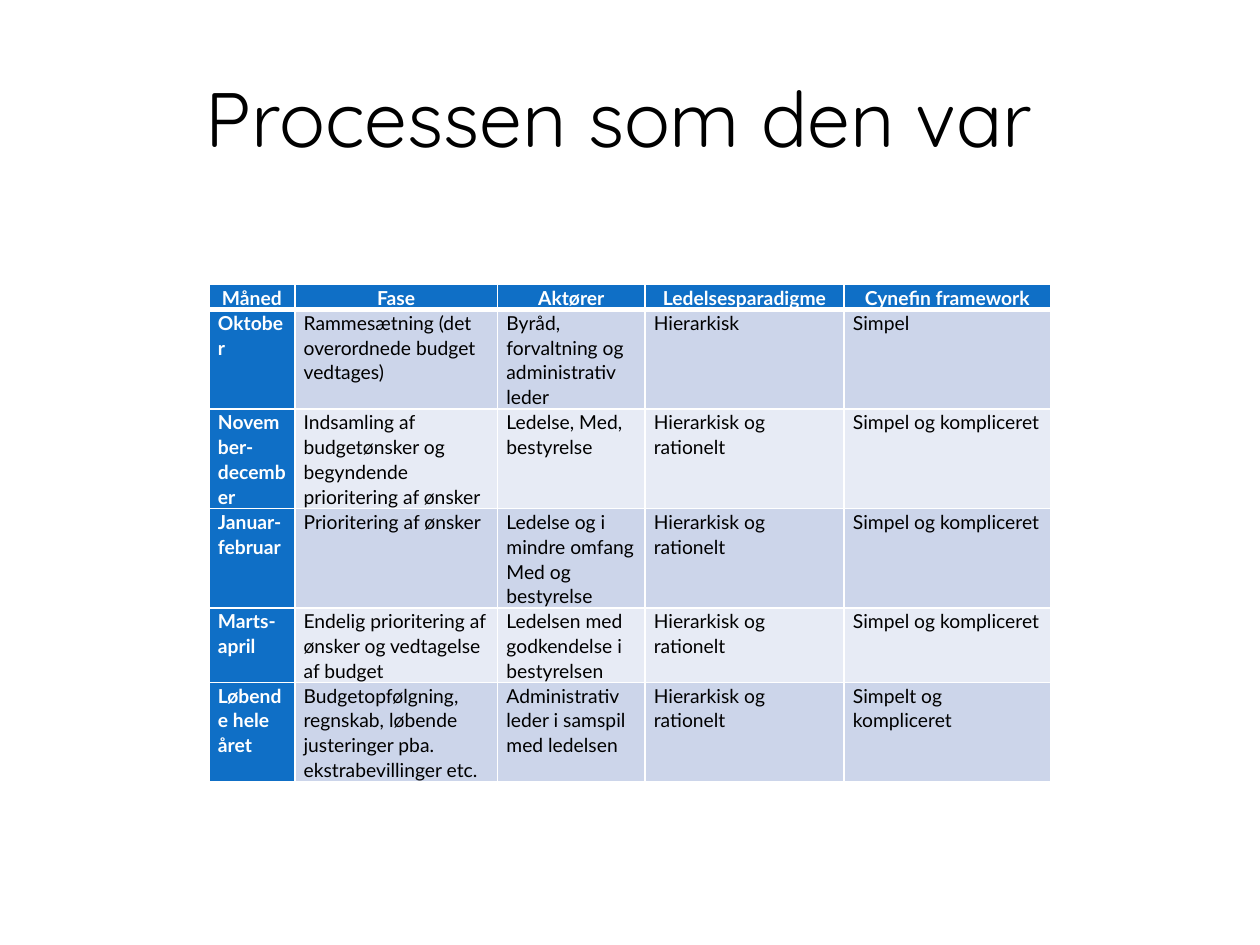
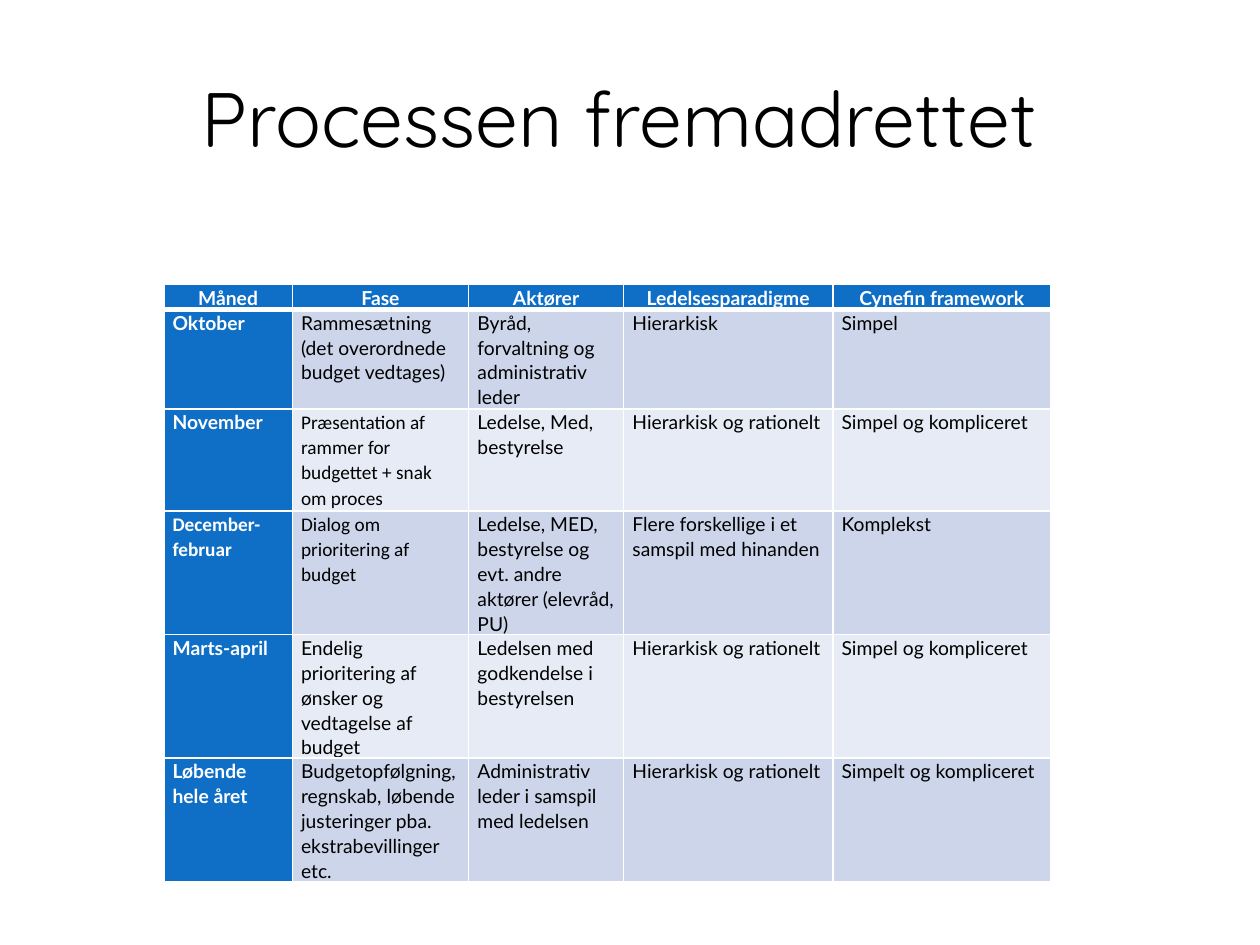
from dataclasses import dataclass

from lxml import etree
from pptx import Presentation
from pptx.dml.color import RGBColor
from pptx.enum.text import MSO_ANCHOR, PP_ALIGN
from pptx.oxml.ns import qn
from pptx.util import Emu, Pt

CENTER, LEFT = PP_ALIGN.CENTER, PP_ALIGN.LEFT
MIDDLE, TOP = MSO_ANCHOR.MIDDLE, MSO_ANCHOR.TOP

# Shared look
BLACK = RGBColor(0x00, 0x00, 0x00)
WHITE = RGBColor(0xFF, 0xFF, 0xFF)
BLUE = RGBColor(0x0F, 0x6F, 0xC6)
BANDS = (RGBColor(0xCC, 0xD5, 0xEA), RGBColor(0xE7, 0xEB, 0xF5))
TITLE_FONT, TABLE_FONT, ALT_FONT = "Quicksand", "Lato", "Calibri"

EMU_PER_PX = 9144  # 100 px to the inch
TABLE_TOP = 226
CELL_INSET = 7
THIN, THICK = 1, 3

# Wording used in both tables
HEADER = ("Måned", "Fase", "Aktører", "Ledelsesparadigme", "Cynefin framework")
RATIONAL = "Hierarkisk og rationelt"
COMPLICATED = "Simpel og kompliceret"
OCTOBER = ("Oktober", "Rammesætning (det overordnede budget vedtages)",
           "Byråd, forvaltning og administrativ leder", "Hierarkisk", "Simpel")
MARCH_APRIL = ("Marts-april", "Endelig prioritering af ønsker og vedtagelse af budget",
               "Ledelsen med godkendelse i bestyrelsen", RATIONAL, COMPLICATED)
ALL_YEAR = ("Løbende hele året",
            "Budgetopfølgning, regnskab, løbende justeringer pba. ekstrabevillinger etc.",
            "Administrativ leder i samspil med ledelsen", RATIONAL, "Simpelt og kompliceret")


@dataclass(frozen=True)
class Process:
    title: str
    left: int
    col_widths: tuple[int, ...]
    row_heights: tuple[int, ...]
    middle_rows: tuple[tuple[str, ...], ...]
    alt_font_cells: tuple[tuple[int, int], ...] = ()

    @property
    def rows(self) -> tuple[tuple[str, ...], ...]:
        return (HEADER, OCTOBER, *self.middle_rows, MARCH_APRIL, ALL_YEAR)


PROCESSES = (
    # The title ends in a space, which counts when it is centred
    Process(
        "Processen som den var ", 166,
        (68, 161, 117, 158, 164), (19, 79, 79, 79, 59, 79),
        (("November-december",
          "Indsamling af budgetønsker og begyndende prioritering af ønsker",
          "Ledelse, Med, bestyrelse", RATIONAL, COMPLICATED),
         ("Januar-februar", "Prioritering af ønsker",
          "Ledelse og i mindre omfang Med og bestyrelse", RATIONAL, COMPLICATED)),
    ),
    Process(
        "Processen fremadrettet ", 130,
        (102, 140, 123, 166, 173), (19, 79, 81, 98, 98, 98),
        (("November", "Præsentation af rammer for budgettet + snak om proces",
          "Ledelse, Med, bestyrelse", RATIONAL, COMPLICATED),
         ("December-februar", "Dialog om prioritering af budget",
          "Ledelse, MED, bestyrelse og evt. andre aktører (elevråd, PU)",
          "Flere forskellige i et samspil med hinanden", "Komplekst")),
        alt_font_cells=((2, 1), (3, 0), (3, 1)),
    ),
)


def px(n: int) -> Emu:
    return Emu(n * EMU_PER_PX)


def set_font(p, name: str, size: int, color: RGBColor, bold: bool = False) -> None:
    p.font.name, p.font.size, p.font.bold = name, Pt(size), bold
    p.font.color.rgb = color


def add_title(slide, text: str) -> None:
    tf = slide.shapes.add_textbox(px(50), px(30), px(900), px(125)).text_frame
    tf.word_wrap = True
    tf.vertical_anchor = MIDDLE
    p = tf.paragraphs[0]
    p.text = text
    p.alignment = CENTER
    set_font(p, TITLE_FONT, 44, BLACK)


def set_borders(cell, top: int, bottom: int) -> None:
    tc_pr = cell._tc.get_or_add_tcPr()
    for side, width in (("L", THIN), ("R", THIN), ("T", top), ("B", bottom)):
        ln = etree.SubElement(tc_pr, qn(f"a:ln{side}"), w=str(Pt(width)))
        fill = etree.SubElement(ln, qn("a:solidFill"))
        etree.SubElement(fill, qn("a:srgbClr"), val=str(WHITE))


def fill_cell(cell, text: str, row: int, col: int, font: str) -> None:
    is_header = row == 0
    is_label = is_header or col == 0
    cell.margin_left = cell.margin_right = px(CELL_INSET)
    cell.margin_top = cell.margin_bottom = 0
    cell.vertical_anchor = TOP
    # Borders precede the fill in the cell's properties
    set_borders(cell, THICK if row == 1 else THIN, THICK if is_header else THIN)
    cell.fill.solid()
    cell.fill.fore_color.rgb = BLUE if is_label else BANDS[(row - 1) % 2]
    p = cell.text_frame.paragraphs[0]
    p.text = text
    p.alignment = CENTER if is_header else LEFT
    p.line_spacing = 1.07
    set_font(p, font, 11, WHITE if is_label else BLACK, is_label)


def add_process_table(slide, process: Process) -> None:
    widths, heights = process.col_widths, process.row_heights
    table = slide.shapes.add_table(
        len(heights), len(widths), px(process.left), px(TABLE_TOP),
        px(sum(widths)), px(sum(heights))).table
    table.first_col = True
    for column, width in zip(table.columns, widths):
        column.width = px(width)
    for row, (texts, height) in enumerate(zip(process.rows, heights)):
        table.rows[row].height = px(height)
        for col, text in enumerate(texts):
            font = ALT_FONT if (row, col) in process.alt_font_cells else TABLE_FONT
            fill_cell(table.cell(row, col), text, row, col, font)


def main() -> None:
    prs = Presentation()
    prs.slide_width, prs.slide_height = px(1000), px(750)
    blank = prs.slide_layouts[6]
    for process in PROCESSES:
        slide = prs.slides.add_slide(blank)
        add_title(slide, process.title)
        add_process_table(slide, process)
    prs.save("out.pptx")


if __name__ == "__main__":
    main()
